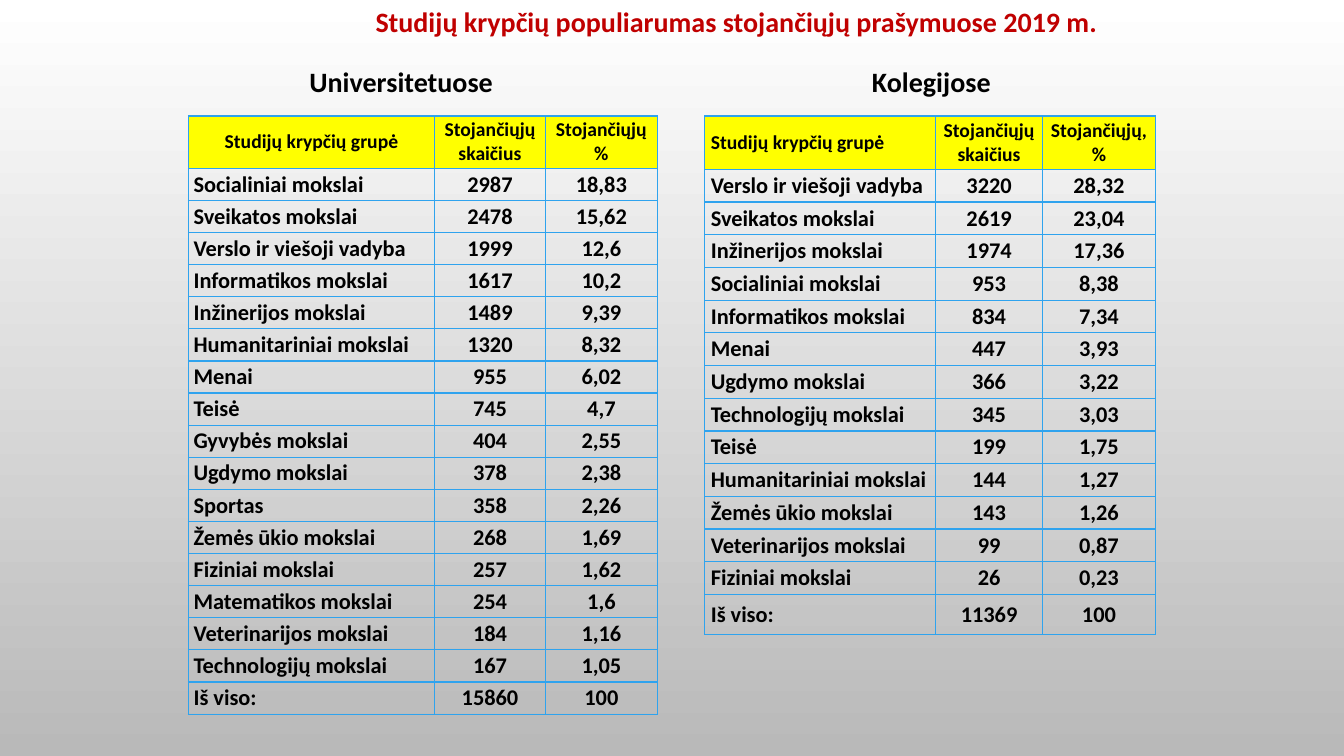
from dataclasses import dataclass

from lxml.etree import SubElement
from pptx import Presentation
from pptx.dml.color import RGBColor
from pptx.enum.text import MSO_ANCHOR, PP_ALIGN
from pptx.oxml.ns import qn
from pptx.util import Inches, Pt


@dataclass(frozen=True)
class Theme:
    font: str = "Calibri"
    title_size: int = 20
    head_size: int = 14
    body_size: int = 16
    title: str = "C00000"
    text: str = "000000"
    head_fill: str = "FFFF00"
    border: str = "2FA3EE"
    border_width: int = 1
    bg_top: str = "FFFFFF"
    bg_bottom: str = "B9B9B9"


THEME = Theme()

TITLE = "Studijų krypčių populiarumas stojančiųjų prašymuose 2019 m."

UNIVERSITY_ROWS = [
    ("Studijų krypčių grupė", "Stojančiųjų skaičius", "Stojančiųjų %"),
    ("Socialiniai mokslai", "2987", "18,83"),
    ("Sveikatos mokslai", "2478", "15,62"),
    ("Verslo ir viešoji vadyba", "1999", "12,6"),
    ("Informatikos mokslai", "1617", "10,2"),
    ("Inžinerijos mokslai", "1489", "9,39"),
    ("Humanitariniai mokslai", "1320", "8,32"),
    ("Menai", "955", "6,02"),
    ("Teisė", "745", "4,7"),
    ("Gyvybės mokslai", "404", "2,55"),
    ("Ugdymo mokslai", "378", "2,38"),
    ("Sportas", "358", "2,26"),
    ("Žemės ūkio mokslai", "268", "1,69"),
    ("Fiziniai mokslai", "257", "1,62"),
    ("Matematikos mokslai", "254", "1,6"),
    ("Veterinarijos mokslai", "184", "1,16"),
    ("Technologijų mokslai", "167", "1,05"),
    ("Iš viso:", "15860", "100"),
]

COLLEGE_ROWS = [
    ("Studijų krypčių grupė", "Stojančiųjų skaičius", "Stojančiųjų, %"),
    ("Verslo ir viešoji vadyba", "3220", "28,32"),
    ("Sveikatos mokslai", "2619", "23,04"),
    ("Inžinerijos mokslai", "1974", "17,36"),
    ("Socialiniai mokslai", "953", "8,38"),
    ("Informatikos mokslai", "834", "7,34"),
    ("Menai", "447", "3,93"),
    ("Ugdymo mokslai", "366", "3,22"),
    ("Technologijų mokslai", "345", "3,03"),
    ("Teisė", "199", "1,75"),
    ("Humanitariniai mokslai", "144", "1,27"),
    ("Žemės ūkio mokslai", "143", "1,26"),
    ("Veterinarijos mokslai", "99", "0,87"),
    ("Fiziniai mokslai", "26", "0,23"),
    ("Iš viso:", "11369", "100"),
]

TABLE_TOP = 1.15
HEADING_TOP = 0.59
TEXT_HEIGHT = 0.44

GROUPS = [
    dict(heading="Universitetuose", heading_left=2.97, heading_width=2.04,
         rows=UNIVERSITY_ROWS, left=1.87, height=5.94, widths=(2.44, 1.1, 1.11),
         head_height=0.52, total_height=0.32, side_inset=0.05,
         first_head_align=PP_ALIGN.CENTER),
    dict(heading="Kolegijose", heading_left=8.55, heading_width=1.39,
         rows=COLLEGE_ROWS, left=6.99, height=5.15, widths=(2.29, 1.06, 1.12),
         head_height=0.53, total_height=0.4, side_inset=0.06,
         first_head_align=PP_ALIGN.LEFT),
]


def style_text(tf, size, color, align):
    p = tf.paragraphs[0]
    p.alignment = align
    for r in p.runs:
        r.font.name = THEME.font
        r.font.size = Pt(size)
        r.font.bold = True
        r.font.color.rgb = RGBColor.from_string(color)


def add_label(s, text, left, top, width, color, align, wrap):
    box = s.shapes.add_textbox(Inches(left), Inches(top), Inches(width), Inches(TEXT_HEIGHT))
    tf = box.text_frame
    tf.word_wrap = wrap
    tf.text = text
    style_text(tf, THEME.title_size, color, align)


def add_borders(cell):
    tc_pr = cell._tc.get_or_add_tcPr()
    for side in ("lnL", "lnR", "lnT", "lnB"):
        ln = SubElement(tc_pr, qn(f"a:{side}"), w=str(Pt(THEME.border_width)))
        fill = SubElement(ln, qn("a:solidFill"))
        SubElement(fill, qn("a:srgbClr"), val=THEME.border)


def fill_cell(cell, text, is_head, align, side_inset):
    cell.text = text
    cell.vertical_anchor = MSO_ANCHOR.MIDDLE
    cell.margin_left = cell.margin_right = Inches(side_inset)
    cell.margin_top = cell.margin_bottom = Inches(0.02)
    add_borders(cell)
    if is_head:
        cell.fill.solid()
        cell.fill.fore_color.rgb = RGBColor.from_string(THEME.head_fill)
    else:
        cell.fill.background()
    size = THEME.head_size if is_head else THEME.body_size
    style_text(cell.text_frame, size, THEME.text, align)


def add_group(s, group):
    """Add one heading with its table; the subject rows share the height left over."""
    add_label(s, group["heading"], group["heading_left"], HEADING_TOP,
              group["heading_width"], THEME.text, PP_ALIGN.LEFT, False)
    rows, widths = group["rows"], group["widths"]
    subjects = len(rows) - 2
    subject_height = (group["height"] - group["head_height"] - group["total_height"]) / subjects
    heights = [group["head_height"], *[subject_height] * subjects, group["total_height"]]

    table = s.shapes.add_table(len(rows), len(widths), Inches(group["left"]), Inches(TABLE_TOP),
                               Inches(sum(widths)), Inches(group["height"])).table
    table.horz_banding = False
    for column, width in zip(table.columns, widths):
        column.width = Inches(width)
    for i, (values, height) in enumerate(zip(rows, heights)):
        table.rows[i].height = Inches(height)
        first_align = group["first_head_align"] if i == 0 else PP_ALIGN.LEFT
        for j, value in enumerate(values):
            align = first_align if j == 0 else PP_ALIGN.CENTER
            fill_cell(table.cell(i, j), value, i == 0, align, group["side_inset"])


def set_background(s):
    fill = s.background.fill
    fill.gradient()
    fill.gradient_angle = 270
    for stop, position, color in zip(fill.gradient_stops, (0, 1), (THEME.bg_top, THEME.bg_bottom)):
        stop.position = position
        stop.color.rgb = RGBColor.from_string(color)


def main():
    prs = Presentation()
    prs.slide_width, prs.slide_height = Inches(13.33), Inches(7.5)
    s = prs.slides.add_slide(prs.slide_layouts[6])
    set_background(s)
    add_label(s, TITLE, 2.96, 0, 8.69, THEME.title, PP_ALIGN.CENTER, True)
    for group in GROUPS:
        add_group(s, group)
    prs.save("out.pptx")


if __name__ == "__main__":
    main()
